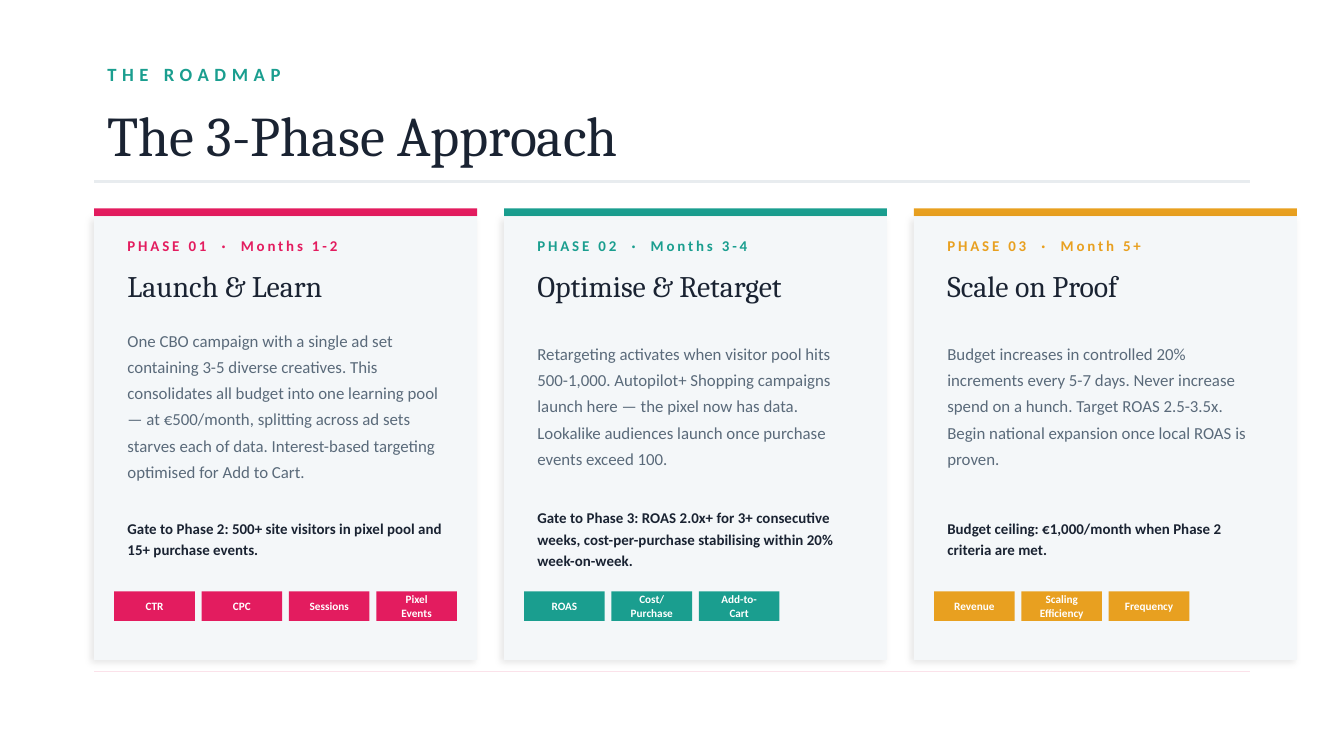
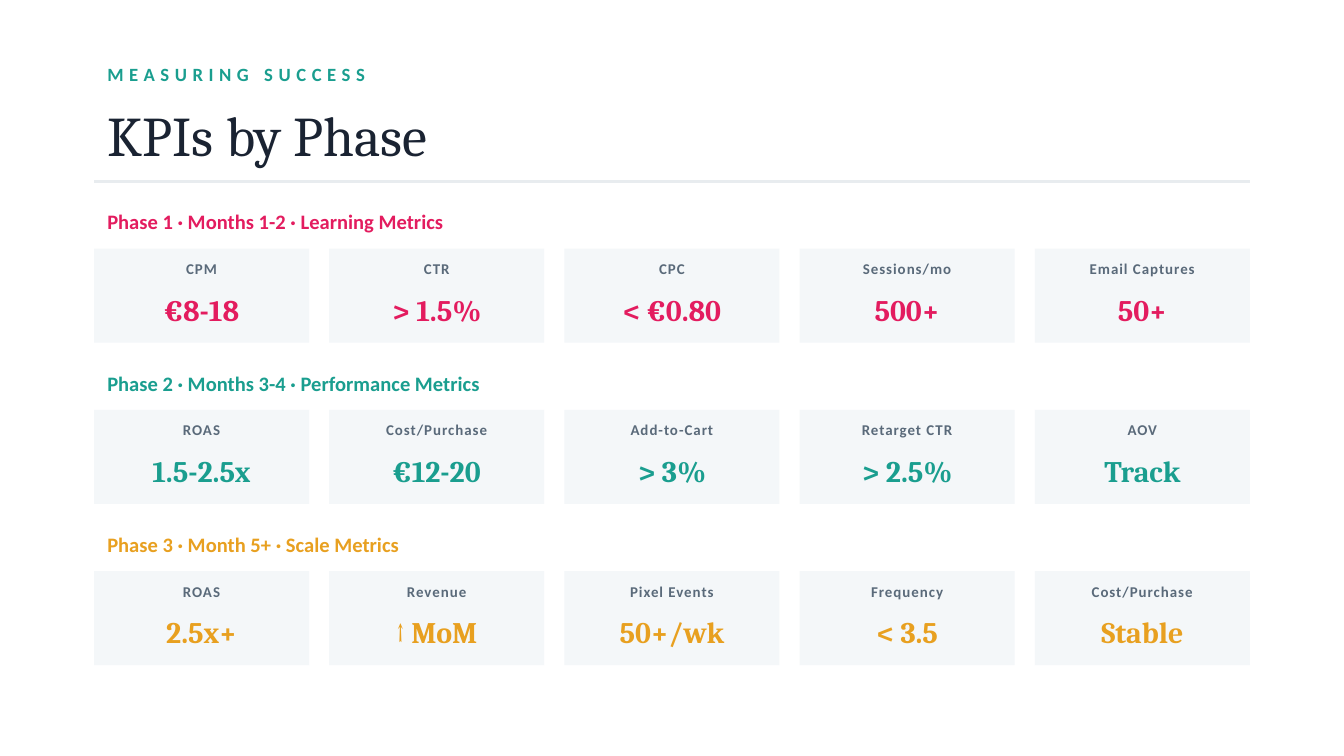
from lxml.etree import SubElement
from pptx import Presentation
from pptx.dml.color import RGBColor
from pptx.enum.shapes import MSO_CONNECTOR, MSO_SHAPE
from pptx.enum.text import MSO_ANCHOR, MSO_AUTO_SIZE, PP_ALIGN
from pptx.oxml.ns import qn
from pptx.util import Pt

# Palette and fonts
PINK = RGBColor(0xE3, 0x1C, 0x5F)
TEAL = RGBColor(0x1A, 0x9E, 0x8F)
AMBER = RGBColor(0xE8, 0xA0, 0x20)
NAVY = RGBColor(0x1A, 0x23, 0x32)
SLATE = RGBColor(0x5A, 0x6A, 0x7A)
MIST = RGBColor(0xF4, 0xF7, 0xF9)
RULE = RGBColor(0xE8, 0xEC, 0xEF)
WHITE = RGBColor(0xFF, 0xFF, 0xFF)
SANS, SERIF = "Calibri", "Cambria"

# Content
ROADMAP = ("THE ROADMAP", "The 3-Phase Approach")
PHASES = [
    {
        "color": PINK,
        "when": "PHASE 01  ·  Months 1-2",
        "name": "Launch & Learn",
        "plan": "One CBO campaign with a single ad set containing 3-5 diverse "
                "creatives. This consolidates all budget into one learning pool — "
                "at €500/month, splitting across ad sets starves each of data. "
                "Interest-based targeting optimised for Add to Cart.",
        "gate": "Gate to Phase 2: 500+ site visitors in pixel pool and "
                "15+ purchase events.",
        "metrics": ["CTR", "CPC", "Sessions", "Pixel Events"],
    },
    {
        "color": TEAL,
        "when": "PHASE 02  ·  Months 3-4",
        "name": "Optimise & Retarget",
        "plan": "Retargeting activates when visitor pool hits 500-1,000. "
                "Autopilot+ Shopping campaigns launch here — the pixel now has "
                "data. Lookalike audiences launch once purchase events exceed 100.",
        "gate": "Gate to Phase 3: ROAS 2.0x+ for 3+ consecutive weeks, "
                "cost-per-purchase stabilising within 20% week-on-week.",
        "metrics": ["ROAS", "Cost/Purchase", "Add-to-Cart"],
    },
    {
        "color": AMBER,
        "when": "PHASE 03  ·  Month 5+",
        "name": "Scale on Proof",
        "plan": "Budget increases in controlled 20% increments every 5-7 days. "
                "Never increase spend on a hunch. Target ROAS 2.5-3.5x. Begin "
                "national expansion once local ROAS is proven.",
        "gate": "Budget ceiling: €1,000/month when Phase 2 criteria are met.",
        "metrics": ["Revenue", "Scaling Efficiency", "Frequency"],
    },
]

MEASURING = ("MEASURING SUCCESS", "KPIs by Phase")
KPI_ROWS = [
    ("Phase 1 · Months 1-2 · Learning Metrics", PINK,
     [("CPM", "€8-18"), ("CTR", "> 1.5%"), ("CPC", "< €0.80"),
      ("Sessions/mo", "500+"), ("Email Captures", "50+")]),
    ("Phase 2 · Months 3-4 · Performance Metrics", TEAL,
     [("ROAS", "1.5-2.5x"), ("Cost/Purchase", "€12-20"), ("Add-to-Cart", "> 3%"),
      ("Retarget CTR", "> 2.5%"), ("AOV", "Track")]),
    ("Phase 3 · Month 5+ · Scale Metrics", AMBER,
     [("ROAS", "2.5x+"), ("Revenue", "↑ MoM"), ("Pixel Events", "50+/wk"),
      ("Frequency", "< 3.5"), ("Cost/Purchase", "Stable")]),
]

# Layout, in points
SLIDE_W, SLIDE_H = 720, 405
LEFT, CONTENT_W = 50.4, 619.2
CARD_TOP, CARD_W, CARD_H, CARD_STEP = 111.6, 205.2, 237.6, 219.6
BAND_H, CARD_PAD = 4.32, 10.8
PILL_TOP, PILL_W, PILL_H, PILL_STEP = 316.8, 43.2, 15.84, 46.8
ROW_TOP, ROW_STEP = 108, 86.4
TILE_W, TILE_H, TILE_STEP = 115.2, 50.4, 126


def write(shape, text, *, size, color, font=SANS, bold=False, align=PP_ALIGN.LEFT,
          tracking=0, leading=None):
    frame = shape.text_frame
    frame.word_wrap = True
    frame.auto_size = MSO_AUTO_SIZE.NONE
    frame.vertical_anchor = MSO_ANCHOR.MIDDLE
    para = frame.paragraphs[0]
    para.alignment = align
    if leading:
        para.line_spacing = leading
    run = para.add_run()
    run.text = text
    run.font.size, run.font.name, run.font.bold = Pt(size), font, bold
    run.font.color.rgb = color
    if tracking:
        run._r.get_or_add_rPr().set("spc", str(int(tracking * 100)))


def add_label(slide, box, text, **style):
    write(slide.shapes.add_textbox(*map(Pt, box)), text, **style)


def add_block(slide, box, color):
    block = slide.shapes.add_shape(MSO_SHAPE.RECTANGLE, *map(Pt, box))
    block.shadow.inherit = False
    block.fill.solid()
    block.fill.fore_color.rgb = color
    block.line.fill.background()
    return block


def add_soft_shadow(block):
    effects = block._element.spPr.find(qn("a:effectLst"))
    outer = SubElement(effects, qn("a:outerShdw"), blurRad=str(Pt(4)), dist=str(Pt(2)),
                       dir=str(135 * 60000), algn="bl", rotWithShape="0")
    black = SubElement(outer, qn("a:srgbClr"), val="000000")
    SubElement(black, qn("a:alpha"), val="10000")


def add_headed_slide(deck, eyebrow, headline):
    slide = deck.slides.add_slide(deck.slide_layouts.get_by_name("Title Only"))
    slide.background.fill.solid()
    slide.background.fill.fore_color.rgb = WHITE
    add_label(slide, (LEFT, 28.8, 288, 21.6), eyebrow,
              size=10, color=TEAL, bold=True, tracking=3)
    title = slide.shapes.title
    title.left, title.top, title.width, title.height = map(Pt, (LEFT, 50.4, 576, 43.2))
    write(title, headline, size=30, color=NAVY, font=SERIF)
    rule = slide.shapes.add_connector(
        MSO_CONNECTOR.STRAIGHT, *map(Pt, (LEFT, 97.2, LEFT + CONTENT_W, 97.2)))
    rule.line.color.rgb = RULE
    rule.line.width = Pt(1.5)
    SubElement(rule._element.spPr, qn("a:effectLst"))
    return slide


def add_phase_card(slide, left, phase):
    color = phase["color"]
    add_block(slide, (left, CARD_TOP, CARD_W, BAND_H), color)
    add_soft_shadow(add_block(slide, (left, CARD_TOP + BAND_H, CARD_W, CARD_H), MIST))

    # Card text: part, top, height, format
    inner, inner_w = left + CARD_PAD, CARD_W - 2 * CARD_PAD
    for part, top, height, style in [
        ("when", 122.4, 18, dict(size=8, color=color, bold=True, tracking=1.5)),
        ("name", 140.4, 25.2, dict(size=16, color=NAVY, font=SERIF)),
        ("plan", 169.2, 93.6, dict(size=9, color=SLATE, leading=1.3)),
        ("gate", 266.4, 43.2, dict(size=8, color=NAVY, bold=True, leading=1.2)),
    ]:
        add_label(slide, (inner, top, inner_w, height), phase[part], **style)

    # Metric pills
    for i, metric in enumerate(phase["metrics"]):
        pill = add_block(slide, (inner + i * PILL_STEP, PILL_TOP, PILL_W, PILL_H), color)
        write(pill, metric, size=6, color=WHITE, bold=True, align=PP_ALIGN.CENTER)


def add_kpi_row(slide, top, heading, color, kpis):
    add_label(slide, (LEFT, top, 360, 21.6), heading, size=11, color=color, bold=True)
    for i, (kpi, target) in enumerate(kpis):
        left = LEFT + i * TILE_STEP
        add_block(slide, (left, top + 25.2, TILE_W, TILE_H), MIST)
        add_label(slide, (left, top + 28.8, TILE_W, 14.4), kpi, size=8, color=SLATE,
                  bold=True, align=PP_ALIGN.CENTER, tracking=0.5)
        add_label(slide, (left, top + 43.2, TILE_W, 28.8), target, size=16, color=color,
                  font=SERIF, bold=True, align=PP_ALIGN.CENTER)


def main():
    deck = Presentation()
    deck.slide_width, deck.slide_height = Pt(SLIDE_W), Pt(SLIDE_H)

    # Roadmap: three phase cards above a hairline
    roadmap = add_headed_slide(deck, *ROADMAP)
    for i, phase in enumerate(PHASES):
        add_phase_card(roadmap, LEFT + i * CARD_STEP, phase)
    add_block(roadmap, (LEFT, 360, CONTENT_W, 0), PINK)

    # KPIs: one row of tiles per phase
    measuring = add_headed_slide(deck, *MEASURING)
    for i, row in enumerate(KPI_ROWS):
        add_kpi_row(measuring, ROW_TOP + i * ROW_STEP, *row)

    deck.save("out.pptx")


if __name__ == "__main__":
    main()
